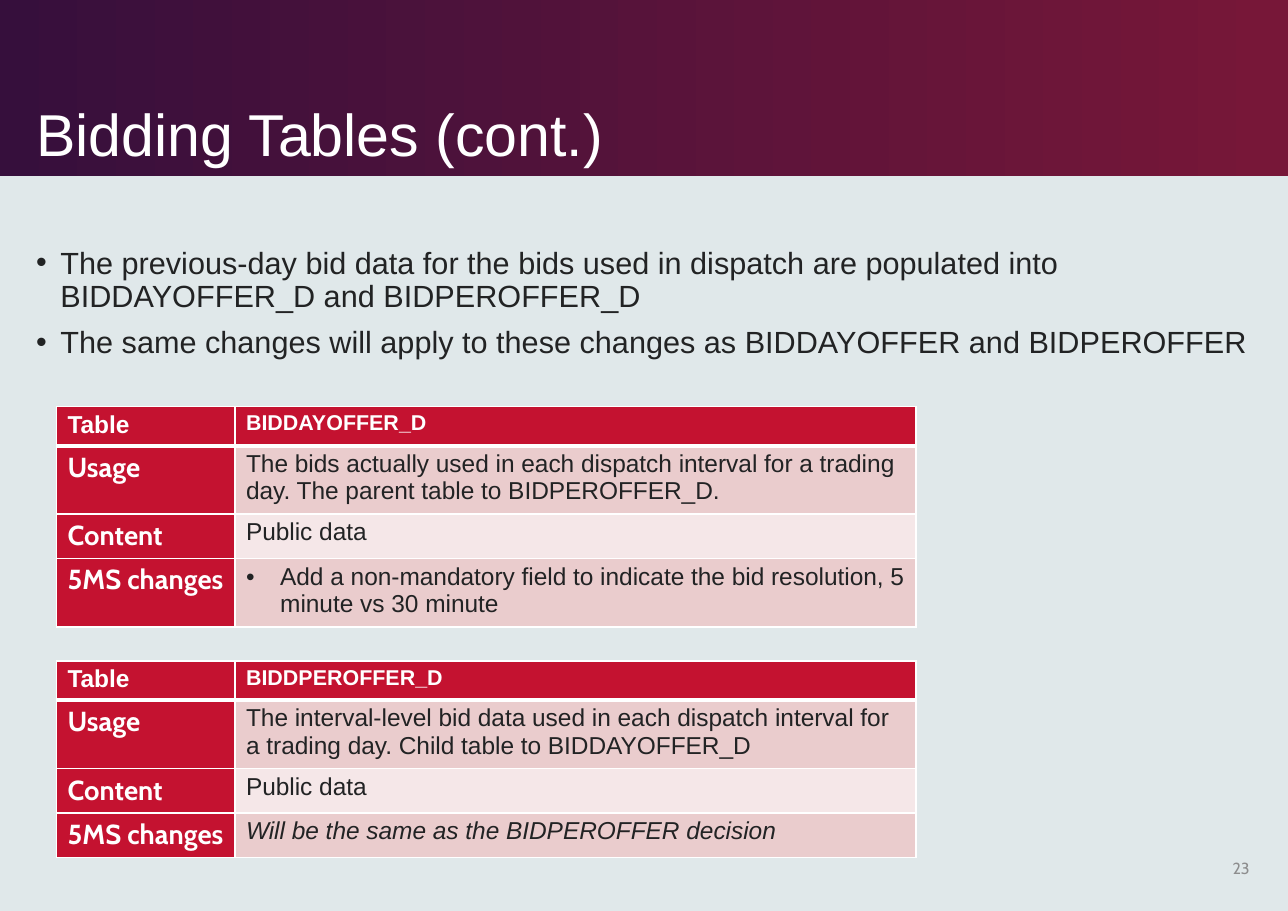
from pptx import Presentation
from pptx.dml.color import RGBColor as RGB
from pptx.enum.shapes import MSO_SHAPE as Shape
from pptx.enum.text import MSO_ANCHOR as Anchor, PP_ALIGN as Align
from pptx.oxml import parse_xml
from pptx.oxml.ns import nsdecls
from pptx.util import Pt

WHITE = RGB(0xFF, 0xFF, 0xFF)
INK = RGB(0x22, 0x23, 0x24)
GRAY = RGB(0x8D, 0x8D, 0x8E)
RED = RGB(0xC4, 0x12, 0x30)
ROSE = RGB(0xEA, 0xCC, 0xCD)
BLUSH = RGB(0xF5, 0xE7, 0xE8)
PLUM = RGB(0x36, 0x0F, 0x3C)
WINE = RGB(0x77, 0x17, 0x38)
MIST = RGB(0xE0, 0xE8, 0xEA)

WIDE, HIGH = 841.68, 595.44
LABELS = ["Table", "Usage", "Content", "5MS changes"]
COLS = [116.64, 444.96]
POINTS = [
    "The previous-day bid data for the bids used in dispatch are populated into "
    "BIDDAYOFFER_D and BIDPEROFFER_D",
    "The same changes will apply to these changes as BIDDAYOFFER and BIDPEROFFER",
]
DAY = [
    "BIDDAYOFFER_D",
    "The bids actually used in each dispatch interval for a trading day. "
    "The parent table to BIDPEROFFER_D.",
    "Public data",
    "Add a non-mandatory field to indicate the bid resolution, 5 minute vs 30 minute",
]
PERIOD = [
    "BIDDPEROFFER_D",
    "The interval-level bid data used in each dispatch interval for a trading day. "
    "Child table to BIDDAYOFFER_D",
    "Public data",
    "Will be the same as the BIDPEROFFER decision",
]


class Deck:
    """Hold the style and the current slide, and add elements to it."""

    def __init__(self, slide):
        self.slide = slide
        self.sans, self.label = "Arial", "Cabin"
        fill = slide.background.fill
        fill.solid()
        fill.fore_color.rgb = MIST

    def style(self, para, size, color, face=None, bold=False, italic=False):
        font = para.font
        font.name, font.size = face or self.sans, Pt(size)
        font.bold, font.italic = bold, italic
        font.color.rgb = color

    def bullet(self, para, indent):
        props = para._p.get_or_add_pPr()
        props.set("marL", str(Pt(indent)))
        props.set("indent", str(Pt(-indent)))
        props.append(parse_xml(f'<a:buFont {nsdecls("a")} typeface="Arial"/>'))
        props.append(parse_xml(f'<a:buChar {nsdecls("a")} char="•"/>'))

    def banner(self, height):
        band = self.slide.shapes.add_shape(Shape.RECTANGLE, 0, 0, Pt(WIDE), Pt(height))
        band.shadow.inherit = False
        band.line.fill.background()
        band.fill.gradient()
        band.fill.gradient_angle = 0
        for stop, spot, color in zip(band.fill.gradient_stops, (0, 0.99), (PLUM, WINE)):
            stop.position, stop.color.rgb = spot, color

    def text(self, box, lines, size, color, face=None, anchor=Anchor.TOP,
             align=Align.LEFT, space=1.0, indent=0):
        frame = self.slide.shapes.add_textbox(*map(Pt, box)).text_frame
        frame.word_wrap = True
        frame.vertical_anchor = anchor
        frame.text = "\n".join(lines)
        for para in frame.paragraphs:
            para.alignment, para.line_spacing = align, space
            if indent:
                para.space_before = Pt(8.8)
                self.bullet(para, indent)
            self.style(para, size, color, face)

    def border(self, cell, top, base):
        props = cell._tc.get_or_add_tcPr()
        sides = zip("LRTB", (1, 1, top, base))
        for spot, (side, width) in enumerate(sides):
            props.insert(spot, parse_xml(
                f'<a:ln{side} {nsdecls("a")} w="{Pt(width)}"><a:solidFill>'
                f'<a:srgbClr val="{WHITE}"/></a:solidFill></a:ln{side}>'))

    def cell(self, cell, text, fill, row):
        cell.margin_top = cell.margin_bottom = Pt(3.2)
        cell.fill.solid()
        cell.fill.fore_color.rgb = fill
        self.border(cell, 3 if row == 1 else 1, 3 if row == 0 else 1)
        cell.text = text
        return cell.text_frame.paragraphs[0]

    def table(self, top, values, rows):
        grid = self.slide.shapes.add_table(
            len(rows), 2, Pt(36.96), Pt(top), Pt(sum(COLS)), Pt(sum(rows))).table
        grid.horz_banding = False
        for col, width in zip(grid.columns, COLS):
            col.width = Pt(width)
        for row, (name, value, height) in enumerate(zip(LABELS, values, rows)):
            grid.rows[row].height = Pt(height)
            head = self.cell(grid.cell(row, 0), name, RED, row)
            note = self.cell(grid.cell(row, 1), value,
                             (RED, ROSE, BLUSH, ROSE)[row], row)
            if row == 0:
                self.style(head, 16, WHITE, bold=True)
                self.style(note, 14, WHITE, bold=True)
            else:
                self.style(head, 18, WHITE, self.label, bold=True)
                self.style(note, 16, INK)
        return note


def main():
    show = Presentation()
    show.slide_width, show.slide_height = Pt(WIDE), Pt(HIGH)
    deck = Deck(show.slides.add_slide(show.slide_layouts[6]))
    deck.banner(115.2)
    deck.text((16.56, 11.52, 621.36, 102.96), ["Bidding Tables (cont.)"], 38.6, WHITE,
              anchor=Anchor.BOTTOM, space=0.9)
    deck.text((16.56, 158.4, 807.84, 87.12), POINTS, 20, INK, space=0.9, indent=15.84)
    change = deck.table(265.68, DAY, (24.8, 43, 29, 43))
    deck.bullet(change, 22.32)
    change = deck.table(432, PERIOD, (24.8, 43, 29, 29))
    change.font.italic = True
    deck.text((784.08, 551.52, 39.6, 31.68), ["23"], 10.5, GRAY, deck.label,
              Anchor.MIDDLE, Align.RIGHT)
    show.save("out.pptx")


if __name__ == "__main__":
    main()
